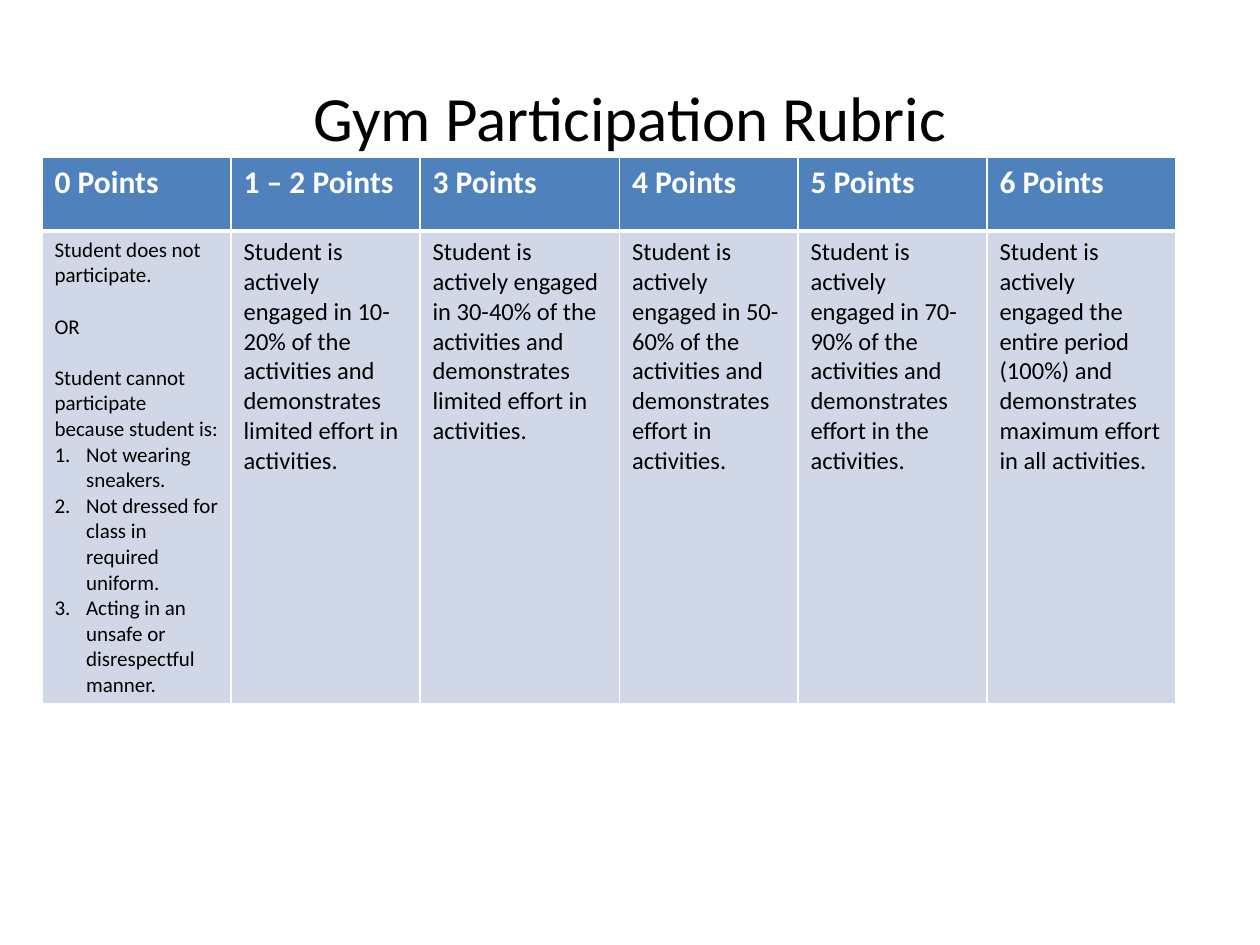
from lxml import etree
from pptx import Presentation
from pptx.dml.color import RGBColor
from pptx.enum.text import MSO_ANCHOR, PP_ALIGN
from pptx.oxml.ns import qn
from pptx.util import Pt

CENTER = PP_ALIGN.CENTER
MIDDLE = MSO_ANCHOR.MIDDLE

BLACK = RGBColor(0x00, 0x00, 0x00)
WHITE = RGBColor(0xFF, 0xFF, 0xFF)
HEADER_BLUE = RGBColor(0x4F, 0x81, 0xBD)
BODY_BLUE = RGBColor(0xD0, 0xD8, 0xE8)

COLUMN_WIDTHS = [108, 108, 114, 102, 108, 108]
ROW_HEIGHTS = [42, 270]
THIN, THICK = 1, 3
BLANK_LINE = 14.65
NUMBER_INDENT = 18

HEADINGS = ["0 Points", "1 – 2 Points", "3 Points", "4 Points", "5 Points", "6 Points"]
ZERO_POINTS = [
    "Student does not participate.",
    "OR",
    "Student cannot participate because student is:",
]
REASONS = [
    "Not wearing sneakers.",
    "Not dressed for class in required uniform.",
    "Acting in an unsafe or disrespectful manner.",
]
LEVELS = [
    "in 10-20% of the activities and demonstrates limited effort in activities.",
    "in 30-40% of the activities and demonstrates limited effort in activities.",
    "in 50-60% of the activities and demonstrates effort in activities.",
    "in 70-90% of the activities and demonstrates effort in the activities.",
    "the entire period (100%) and demonstrates maximum effort in all activities.",
]


class SlideBuilder:
    font = "Calibri"

    def __init__(self, page):
        self.page = page

    def span(self, para, text, size, color, bold=False):
        span = para.add_run()
        span.text = text
        span.font.name = self.font
        span.font.size = Pt(size)
        span.font.bold = bold
        span.font.color.rgb = color

    def title(self, text, left, top, width, height, size):
        box = self.page.shapes.add_textbox(Pt(left), Pt(top), Pt(width), Pt(height))
        frame = box.text_frame
        frame.word_wrap = True
        frame.vertical_anchor = MIDDLE
        para = frame.paragraphs[0]
        para.alignment = CENTER
        self.span(para, text, size, BLACK)

    def table(self, left, top, widths, heights):
        table = self.page.shapes.add_table(
            len(heights), len(widths),
            Pt(left), Pt(top), Pt(sum(widths)), Pt(sum(heights))).table
        for column, width in zip(table.columns, widths):
            column.width = Pt(width)
        for row, height in zip(table.rows, heights):
            row.height = Pt(height)
        return table

    def cell(self, cell, fill, top_line, bottom_line):
        cell.fill.solid()
        cell.fill.fore_color.rgb = fill
        properties = cell._tc.get_or_add_tcPr()
        sides = [("L", THIN), ("R", THIN), ("T", top_line), ("B", bottom_line)]
        for position, (side, width) in enumerate(sides):
            line = etree.Element(qn("a:ln" + side), w=str(Pt(width)))
            solid = etree.SubElement(line, qn("a:solidFill"))
            etree.SubElement(solid, qn("a:srgbClr"), val=str(WHITE))
            properties.insert(position, line)

    def cell_text(self, cell, texts, size, color, bold=False, gap=0):
        frame = cell.text_frame
        for index, text in enumerate(texts):
            para = frame.add_paragraph() if index else frame.paragraphs[0]
            if index and gap:
                para.space_before = Pt(gap)
            self.span(para, text, size, color, bold)

    def numbered_list(self, cell, texts, size, color):
        for text in texts:
            para = cell.text_frame.add_paragraph()
            properties = para._p.get_or_add_pPr()
            properties.set("marL", str(Pt(NUMBER_INDENT)))
            properties.set("indent", str(Pt(-NUMBER_INDENT)))
            etree.SubElement(properties, qn("a:buFont"), typeface="+mj-lt")
            etree.SubElement(properties, qn("a:buAutoNum"), type="arabicPeriod")
            self.span(para, text, size, color)


def main():
    deck = Presentation()
    deck.slide_width, deck.slide_height = Pt(720), Pt(540)
    builder = SlideBuilder(deck.slides.add_slide(deck.slide_layouts[6]))

    # Title
    builder.title("Gym Participation Rubric", 36, 21.6, 648, 90, 36)

    # Rubric grid
    table = builder.table(24, 90, COLUMN_WIDTHS, ROW_HEIGHTS)
    for column, heading in enumerate(HEADINGS):
        header = table.cell(0, column)
        builder.cell(header, HEADER_BLUE, THIN, THICK)
        builder.cell_text(header, [heading], 18, WHITE, bold=True)
        builder.cell(table.cell(1, column), BODY_BLUE, THICK, THIN)

    # Zero points and its numbered reasons
    zero = table.cell(1, 0)
    builder.cell_text(zero, ZERO_POINTS, 12, BLACK, gap=BLANK_LINE)
    builder.numbered_list(zero, REASONS, 12, BLACK)

    # Higher levels
    for column, level in enumerate(LEVELS, start=1):
        text = "Student is actively engaged " + level
        builder.cell_text(table.cell(1, column), [text], 14, BLACK)

    deck.save("out.pptx")


if __name__ == "__main__":
    main()
